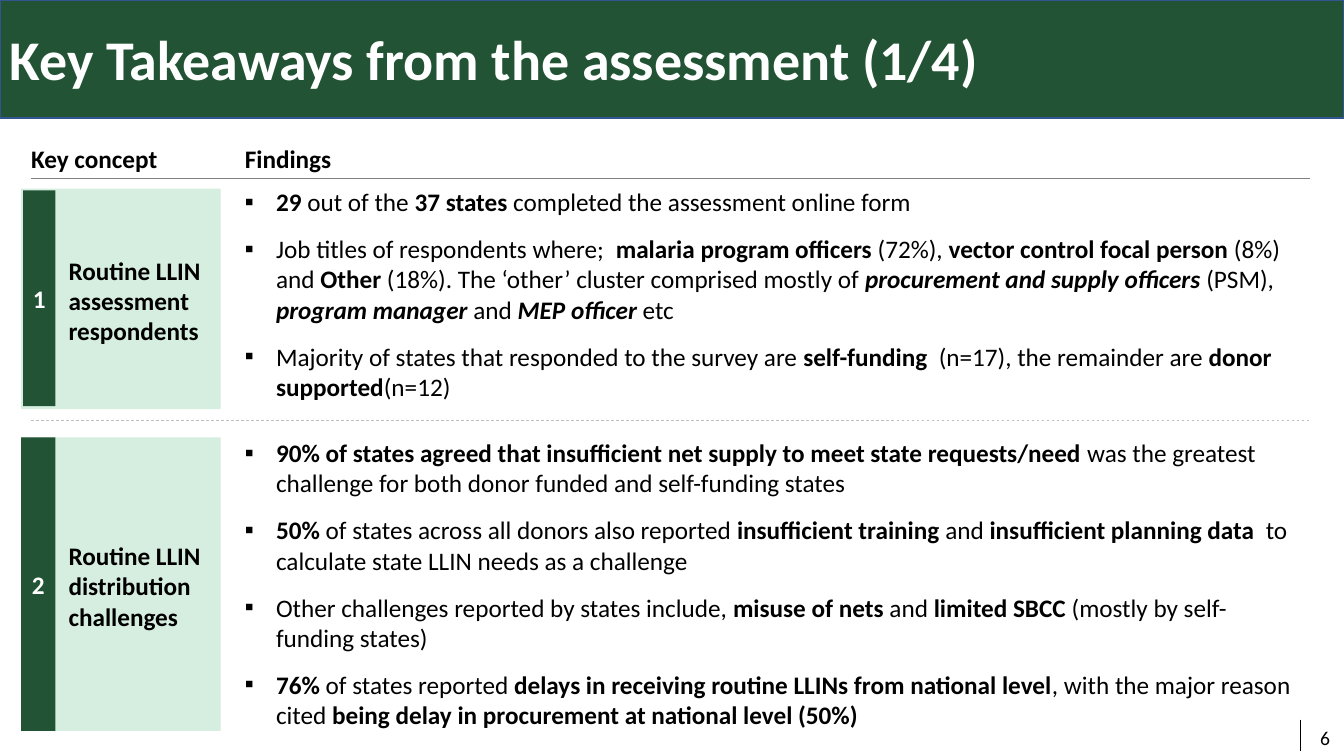
from lxml import etree
from pptx import Presentation
from pptx.dml.color import RGBColor
from pptx.enum.dml import MSO_LINE
from pptx.enum.shapes import MSO_CONNECTOR, MSO_SHAPE
from pptx.enum.text import MSO_ANCHOR, PP_ALIGN
from pptx.oxml.ns import qn
from pptx.util import Inches, Pt

RECT, STRAIGHT, DASH = MSO_SHAPE.RECTANGLE, MSO_CONNECTOR.STRAIGHT, MSO_LINE.DASH
TOP, MIDDLE = MSO_ANCHOR.TOP, MSO_ANCHOR.MIDDLE
LEFT, CENTER, RIGHT = PP_ALIGN.LEFT, PP_ALIGN.CENTER, PP_ALIGN.RIGHT
COLORS = {"green": "215334", "mint": "D6EEDF", "blue": "325491", "black": "000000",
          "white": "FFFFFF", "gray": "808080", "silver": "BFBFBF"}
W, H = 13.33, 7.5
CONCEPT_X, FINDINGS_X = 0.21, 2.33
RULE_X, RULE_END = 0.31, 12.99
HEADER_Y, HEADER_H = 1.37, 0.4
LABEL_W, BULLET_INDENT = 1.98, 0.31

prs = Presentation()
prs.slide_width, prs.slide_height = Inches(W), Inches(H)
s = prs.slides.add_slide(prs.slide_layouts[6])


def rgb(name):
    return RGBColor.from_string(COLORS[name])


def add_text(box, paragraphs, fill=None, line=None, size=18, color="black", bold=False,
             align=LEFT, anchor=TOP, insets=(0.1, 0.05, 0.1, 0.05), gap=0,
             spacing=1, bullet=None):
    """Text between asterisks is bold; a leading underscore there adds italics."""
    box = [Inches(v) for v in box]
    if fill:
        sp = s.shapes.add_shape(RECT, *box)
        sp.shadow.inherit = False
        sp.fill.solid()
        sp.fill.fore_color.rgb = rgb(fill)
        if line:
            sp.line.color.rgb = rgb(line)
            sp.line.width = Pt(1)
        else:
            sp.line.fill.background()
    else:
        sp = s.shapes.add_textbox(*box)
    tf = sp.text_frame
    tf.word_wrap = True
    tf.vertical_anchor = anchor
    tf.margin_left, tf.margin_top, tf.margin_right, tf.margin_bottom = map(Inches, insets)
    for i, text in enumerate(paragraphs):
        p = tf.add_paragraph() if i else tf.paragraphs[0]
        p.alignment = align
        p.line_spacing = spacing
        p.space_before = p.space_after = Pt(gap)
        if bullet:
            pPr = p._p.get_or_add_pPr()
            pPr.set("marL", str(Inches(BULLET_INDENT)))
            pPr.set("indent", str(-Inches(BULLET_INDENT)))
            etree.SubElement(pPr, qn("a:buFont")).set("typeface", "Calibri")
            etree.SubElement(pPr, qn("a:buChar")).set("char", bullet)
        for j, part in enumerate(text.split("*")):
            if part:
                r = p.add_run()
                r.text = part.removeprefix("_")
                r.font.name, r.font.size = "Calibri", Pt(size)
                r.font.bold = bold or j % 2 == 1
                r.font.italic = part.startswith("_")
                r.font.color.rgb = rgb(color)


add_text((0, 0, W, 1.17), [], fill="green", line="blue")
add_text((0, 0.11, W, 1.02), ["Key Takeaways from the assessment (1/4)"],
         size=40, color="white", bold=True, anchor=MIDDLE, spacing=0.9)

for x1, y1, x2, y2, color, width, dash in [
    (12.9, 7.14, 12.9, 7.45, "black", 0.5, None),
    (RULE_X, 4.17, RULE_END, 4.17, "silver", 0.5, DASH),
    (RULE_X, 1.77, RULE_END, 1.77, "gray", 0.75, None),
]:
    c = s.shapes.add_connector(STRAIGHT, *map(Inches, (x1, y1, x2, y2)))
    c.line.color.rgb = rgb(color)
    c.line.width = Pt(width)
    if dash:
        c.line.dash_style = dash
    etree.SubElement(c._element.spPr, qn("a:effectLst"))

for x, width, heading in [(CONCEPT_X, 2.17, "Key concept"), (FINDINGS_X, 7.83, "Findings")]:
    add_text((x, HEADER_Y, width, HEADER_H), [heading], bold=True, gap=3)

rows = [
    ("1", "Routine LLIN assessment respondents", (1.87, 2.19), (0.23, 1.89, 0.32, 2.14),
     (1.8, 10.81, 2.26), [
        "*29 *out of the *37 states *completed the assessment online form",
        "Job titles of respondents where;  *malaria program officers *(72%), "
        "*vector control focal person* (8%) and *Other* (18%). The ‘other’ cluster "
        "comprised mostly of *_procurement and supply officers *(PSM), "
        "*_program manager *and *_MEP officer *etc",
        "Majority of states that responded to the survey are *self-funding * (n=17), "
        "the remainder are *donor supported*(n=12)",
    ]),
    ("2", "Routine LLIN distribution challenges", (4.34, 2.91), (0.21, 4.34, 0.34, 2.91),
     (4.29, 10.63, 3.03), [
        "*90% of states agreed that insufficient net supply to meet state requests/need *"
        "was the greatest challenge for both donor funded and self-funding states",
        "*50%* of states across all donors also reported *insufficient training *and "
        "*insufficient planning data  *to calculate state LLIN needs as a challenge",
        "Other challenges reported by states include,* misuse of nets* and "
        "*limited SBCC *(mostly by self-funding states)",
        "*76% *of states reported *delays in receiving routine LLINs from national level*"
        ", with the major reason cited "
        "*being delay in procurement at national level (50%)*",
    ]),
]
for number, concept, (y, height), tab, (text_y, text_w, text_h), findings in rows:
    add_text((FINDINGS_X, text_y, text_w, text_h), findings, gap=6, bullet="▪")
    add_text((CONCEPT_X, y, LABEL_W, height), [concept], fill="mint", bold=True,
             anchor=MIDDLE, insets=(0.47, 0.08, 0.08, 0.05))
    add_text(tab, [number], fill="green", color="white", bold=True, align=CENTER,
             anchor=MIDDLE, insets=(0.05, 0.05, 0.05, 0.05))

add_text((10.29, 7.12, 3, 0.4), ["6"], size=14, align=RIGHT, anchor=MIDDLE)

prs.save("out.pptx")
